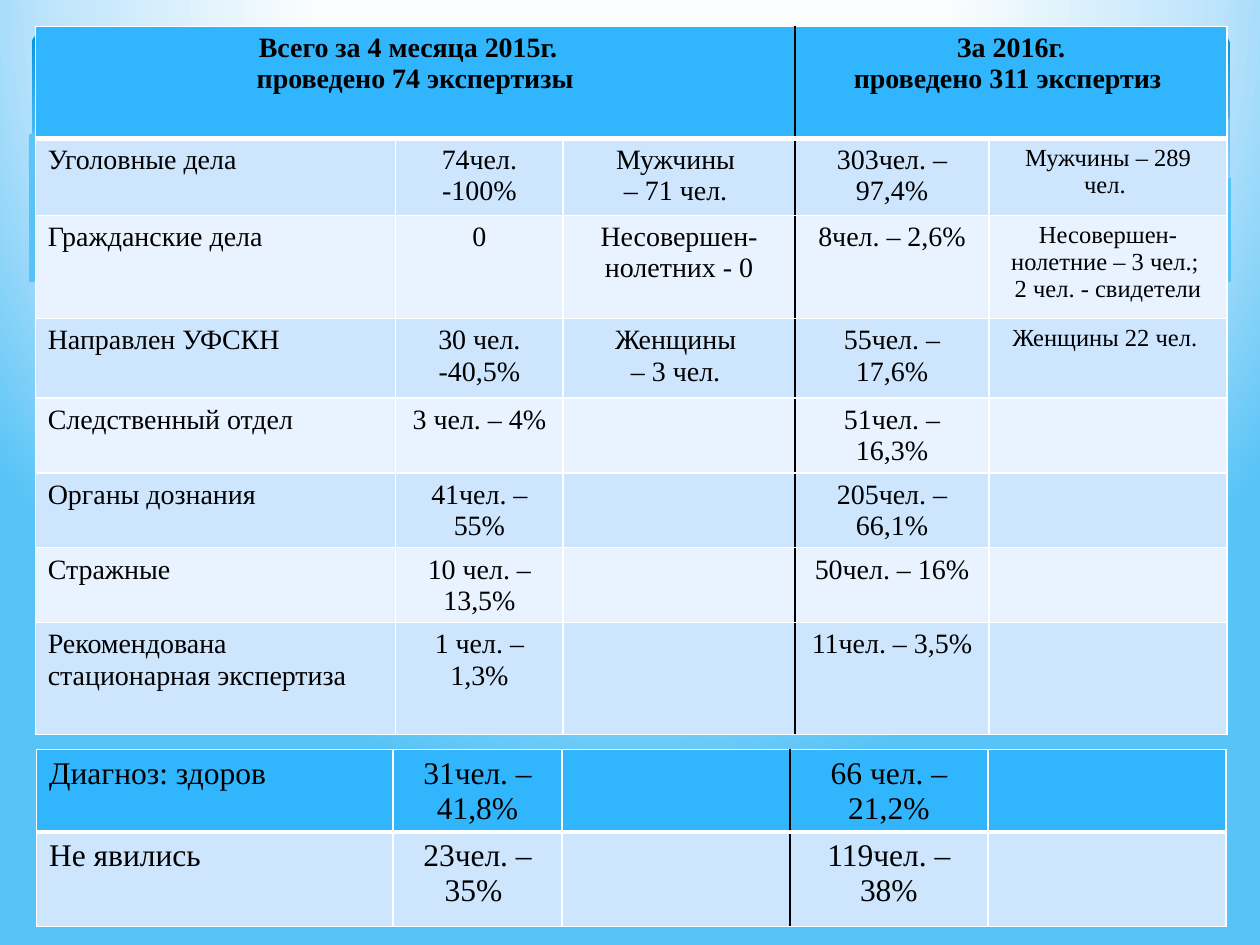
from lxml import etree
from pptx import Presentation
from pptx.dml.color import RGBColor
from pptx.enum import shapes, text
from pptx.oxml import parse_xml
from pptx.oxml import ns
from pptx.util import Inches, Pt

WHITE = RGBColor(0xFF, 0xFF, 0xFF)
BLACK = RGBColor(0, 0, 0)
HEADER = RGBColor(0x31, 0xB6, 0xFD)
BAND = RGBColor(0xCE, 0xE5, 0xFE)
LIGHT_BAND = RGBColor(0xE8, 0xF3, 0xFF)
VEIL = RGBColor(0xC6, 0xE7, 0xFC)
BANNER_STOPS = [(0, RGBColor(0x02, 0x93, 0xE0)), (90, RGBColor(0x83, 0xD3, 0xFE))]
SKY_STOPS = [
    (40, RGBColor(0xFA, 0xFD, 0xFE)),
    (74, RGBColor(0xBE, 0xE4, 0xFC)),
    (100, RGBColor(0x58, 0xC3, 0xF6)),
]
DOWN = '<a:lin ang="5400000" scaled="0"/>'
RADIAL = ('<a:path path="circle"><a:fillToRect l="20000" t="-40000" '
          'r="20000" b="140000"/></a:path>')
FONT = "Times New Roman"
DIVIDER = 2

WAVE = [(9.52, 1.16), (8.95, 1.34), (8.25, 1.45), (7.53, 1.45), (6.63, 1.37),
        (5.54, 1.19), (4.22, 0.89), (2.91, 0.63), (1.68, 0.53), (0.7, 0.6),
        (0.21, 0.73), (-0.02, 0.82), (-0.02, 1.99), (9.52, 1.99)]
VEILS = [
    (29, [(9.51, 0.69), (8.36, 0.93), (7.04, 1.22), (6.36, 1.35), (7.2, 1.44),
          (8.1, 1.47), (8.96, 1.35), (9.51, 1.16)]),
    (40, [(8.68, 1.42), (7.5, 1.24), (6.04, 0.91), (4.64, 0.64), (3.55, 0.55),
          (2.61, 0.61), (3.79, 0.81), (5.41, 1.18), (6.7, 1.4), (7.93, 1.48)]),
]
STROKES = [
    [(2.84, 0.65), (3.76, 0.57), (4.64, 0.59), (5.83, 0.73), (7.02, 0.95),
     (8.06, 1.2), (8.82, 1.41)],
    [(5.88, 1.26), (6.95, 0.99), (8.11, 0.74), (8.99, 0.59), (9.5, 0.55)],
]

CASES = [
    ["Всего за 4 месяца 2015г.  \nпроведено 74 экспертизы", "", "",
     " За 2016г. \nпроведено 311 экспертиз ", ""],
    ["Уголовные дела", "74чел. -100%", "Мужчины \n– 71 чел. ",
     "303чел. – 97,4%", "Мужчины – 289 чел. "],
    ["Гражданские дела", "0", "Несовершен-нолетних - 0", "8чел. – 2,6%",
     "Несовершен-нолетние – 3 чел.; \n2 чел. - свидетели"],
    ["Направлен УФСКН", "30 чел. -40,5%", "Женщины \n– 3 чел. ",
     "55чел. – 17,6%", "Женщины 22 чел. "],
    ["Следственный отдел", "3 чел. – 4%", "", "51чел. – 16,3%", ""],
    ["Органы дознания", "41чел. – 55%", "", "205чел. – 66,1%", ""],
    ["Стражные", "10 чел. – 13,5%", "", "50чел. – 16%", ""],
    ["Рекомендована стационарная экспертиза", "1 чел. – 1,3%", "",
     "11чел. – 3,5%", ""],
]
DIAGNOSES = [
    ["Диагноз: здоров", "31чел. – 41,8%", "", "66 чел. – 21,2%", ""],
    ["Не явились", "23чел. – 35% ", "", "119чел. – 38%", ""],
]


def set_gradient(owner, stops, direction):
    """Swap the solid fill inside an XML element for a gradient."""
    marks = "".join(
        f'<a:gs pos="{place * 1000}"><a:srgbClr val="{color}"/></a:gs>'
        for place, color in stops)
    gradient = parse_xml(
        f'<a:gradFill {ns.nsdecls("a")} rotWithShape="1">'
        f'<a:gsLst>{marks}</a:gsLst>{direction}</a:gradFill>')
    solid = owner.find(ns.qn("a:solidFill"))
    owner.replace(solid, gradient)


def add_background(page):
    """Fill the page with the radial sky gradient."""
    page.background.fill.solid()
    set_gradient(page.element.find(".//" + ns.qn("p:bgPr")), SKY_STOPS, RADIAL)


def add_curve(page, left, top, points, closed=True):
    """Draw an outline through points measured in inches from a corner."""
    corners = [(left + Inches(x), top + Inches(y)) for x, y in points]
    builder = page.shapes.build_freeform(*corners[0], scale=1.0)
    builder.add_line_segments(corners[1:], close=closed)
    curve = builder.convert_to_shape()
    curve.shadow.inherit = False
    if closed:
        curve.fill.solid()
        curve.line.fill.background()
    else:
        curve.fill.background()
        curve.line.color.rgb = WHITE
        curve.line.width = Pt(0.25)
    return curve


def add_banner(page, left, top, width, height):
    """Place the rounded banner with its veils, strokes and wave."""
    banner = page.shapes.add_shape(
        shapes.MSO_SHAPE.ROUNDED_RECTANGLE, left, top, width, height)
    banner.adjustments[0] = 0.07
    banner.shadow.inherit = False
    banner.line.fill.background()
    banner.fill.solid()
    set_gradient(banner.element.spPr, BANNER_STOPS, DOWN)
    for opacity, points in VEILS:
        veil = add_curve(page, left, top, points)
        veil.fill.fore_color.rgb = VEIL
        color = veil.element.spPr.find(".//" + ns.qn("a:srgbClr"))
        etree.SubElement(color, ns.qn("a:alpha"), val=str(opacity * 1000))
    for points in STROKES:
        add_curve(page, left, top, points, closed=False)
    wave = add_curve(page, left, top, WAVE)
    set_gradient(wave.element.spPr, SKY_STOPS, RADIAL)


def set_borders(cell, borders):
    """Give a cell its left, right, top and bottom lines."""
    properties = cell._tc.get_or_add_tcPr()
    for index, (side, color, width) in enumerate(borders):
        properties.insert(index, parse_xml(
            f'<a:ln{side} {ns.nsdecls("a")} w="{Pt(width)}"><a:solidFill>'
            f'<a:srgbClr val="{color}"/></a:solidFill></a:ln{side}>'))


def format_cell(cell, words, size, bold, centered):
    """Write words into a cell and format every paragraph."""
    cell.text_frame.text = words
    for para in cell.text_frame.paragraphs:
        para.alignment = text.PP_ALIGN.CENTER if centered else text.PP_ALIGN.LEFT
        for span in para.runs:
            span.font.name = FONT
            span.font.size = Pt(size)
            span.font.bold = bold
            span.font.color.rgb = BLACK


def add_grid(page, left, top, columns, heights, rows, sizes, titled=False):
    """Place a banded table with a black divider between the two years."""
    frame = page.shapes.add_table(
        len(rows), len(columns), left, top,
        Inches(sum(columns)), Inches(sum(heights)))
    table = frame.table
    for column, width in zip(table.columns, columns):
        column.width = Inches(width)
    for row, height in zip(table.rows, heights):
        row.height = Inches(height)
    if titled:
        table.cell(0, 0).merge(table.cell(0, DIVIDER))
        table.cell(0, DIVIDER + 1).merge(table.cell(0, len(columns) - 1))
    for r, row in enumerate(rows):
        title = titled and r == 0
        for c, words in enumerate(row):
            cell = table.cell(r, c)
            size = sizes[0] if title else sizes[c]
            format_cell(cell, words, size, title, title or c > 0)
            cell.fill.solid()
            cell.fill.fore_color.rgb = (
                HEADER if r == 0 else BAND if r % 2 else LIGHT_BAND)
            before_divider = c == DIVIDER or (title and c == 0)
            set_borders(cell, [
                ("L", BLACK if c == DIVIDER + 1 else WHITE, 1),
                ("R", BLACK if before_divider else WHITE, 1),
                ("T", WHITE, 3 if r == 1 else 1),
                ("B", WHITE, 3 if r == 0 else 1),
            ])


def main():
    """Build the slide and save the deck."""
    deck = Presentation()
    deck.slide_width, deck.slide_height = Inches(10), Inches(7.5)
    page = deck.slides.add_slide(deck.slide_layouts[6])
    add_background(page)
    add_banner(page, Inches(0.25), Inches(0.25), Inches(9.51), Inches(1.56))
    add_grid(page, Inches(0.28), Inches(0.21), [2.86, 1.33, 1.84, 1.54, 1.89],
             [0.89, 0.61, 0.82, 0.63, 0.59, 0.59, 0.59, 0.89],
             CASES, [16, 16, 16, 16, 14], titled=True)
    add_grid(page, Inches(0.29), Inches(5.95), [2.83, 1.34, 1.81, 1.57, 1.89],
             [0.65, 0.75], DIAGNOSES, [18] * 5)
    deck.save("out.pptx")


if __name__ == "__main__":
    main()
